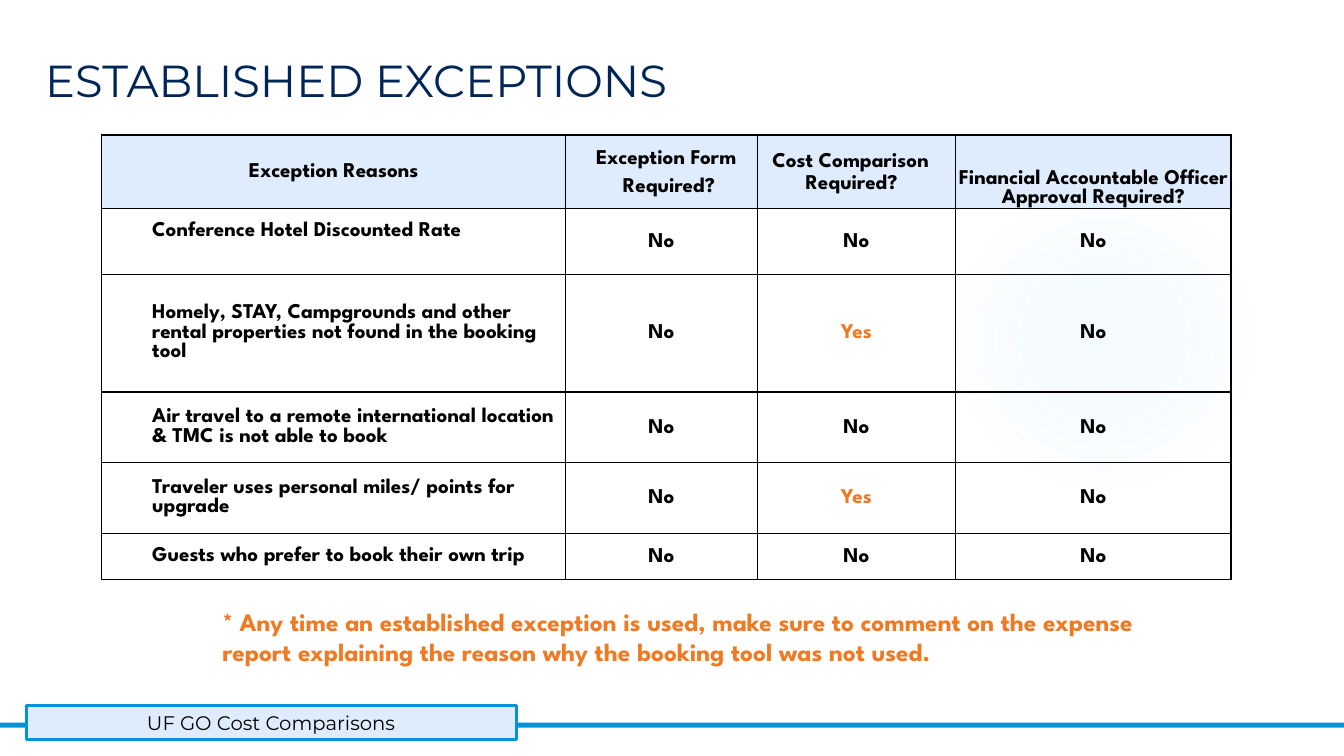
from dataclasses import dataclass

from lxml import etree
from pptx import Presentation
from pptx.dml.color import RGBColor
from pptx.enum.shapes import MSO_SHAPE
from pptx.enum.text import MSO_ANCHOR, PP_ALIGN
from pptx.oxml import parse_xml
from pptx.oxml.ns import nsdecls
from pptx.util import Inches, Pt

LEFT, CENTER = PP_ALIGN.LEFT, PP_ALIGN.CENTER
MIDDLE, BOTTOM = MSO_ANCHOR.MIDDLE, MSO_ANCHOR.BOTTOM
RECTANGLE, OVAL = MSO_SHAPE.RECTANGLE, MSO_SHAPE.OVAL


@dataclass(frozen=True)
class Theme:
    navy: str = "002657"
    blue: str = "0593D7"
    pale_blue: str = "DEECFD"
    glow: str = "7AC4F0"
    orange: str = "EF7A24"
    black: str = "000000"
    heading_font: str = "Montserrat"
    table_font: str = "League Spartan"
    title_size: int = 32
    note_size: int = 18
    table_size: int = 15
    footer_size: int = 14


@dataclass(frozen=True)
class TextStyle:
    font: str
    size: int
    color: str
    bold: bool = False
    align: PP_ALIGN = LEFT
    line_spacing: float | Pt = 1.0
    space_between: float = 0
    margin: float = 0
    first_indent: float = 0


@dataclass(frozen=True)
class CellLook:
    style: TextStyle
    anchor: MSO_ANCHOR = MIDDLE
    fill: str | None = None
    bottom_inset: float = 0


@dataclass(frozen=True)
class Box:
    left: float
    top: float
    width: float
    height: float

    def lengths(self) -> list[Inches]:
        return [Inches(v) for v in (self.left, self.top, self.width, self.height)]


THEME = Theme()


def table_style(**changes) -> TextStyle:
    return TextStyle(THEME.table_font, THEME.table_size,
                     changes.pop("color", THEME.black), bold=True, **changes)


HANGING = {"line_spacing": Pt(16.1), "space_between": 4, "margin": 0.48, "first_indent": -0.33}
HEADERS = [
    ("Exception Reasons", table_style(align=CENTER, line_spacing=1.07), MIDDLE),
    ("Exception Form \nRequired?", table_style(align=CENTER, **HANGING), MIDDLE),
    ("Cost Comparison Required?", table_style(**HANGING), MIDDLE),
    ("Financial Accountable Officer Approval Required?", table_style(align=CENTER), BOTTOM),
]
EXCEPTIONS = [
    ("Conference Hotel Discounted Rate", "No", "No", "No"),
    ("Homely, STAY, Campgrounds and other rental properties not found in the booking tool",
     "No", "Yes", "No"),
    ("Air travel to a remote international location & TMC is not able to book",
     "No", "No", "No"),
    ("Traveler uses personal miles/ points for upgrade", "No", "Yes", "No"),
    ("Guests who prefer to book their own trip", "No", "No", "No"),
]
COLUMN_WIDTHS = [4.6, 1.9, 1.97, 2.73]
ROW_HEIGHTS = [0.73, 0.65, 1.17, 0.7, 0.7, 0.46]
FIRST_REASON_INSET = 0.2


def write_text(text_frame, text: str, style: TextStyle) -> None:
    text_frame.word_wrap = True
    text_frame.text = text
    for index, paragraph in enumerate(text_frame.paragraphs):
        properties = paragraph._p.get_or_add_pPr()
        properties.set("marL", str(Inches(style.margin)))
        properties.set("indent", str(Inches(style.first_indent)))
        paragraph.alignment = style.align
        paragraph.line_spacing = style.line_spacing
        if index:
            paragraph.space_before = Pt(style.space_between)
        paragraph.font.name = style.font
        paragraph.font.size = Pt(style.size)
        paragraph.font.bold = style.bold
        paragraph.font.color.rgb = RGBColor.from_string(style.color)


def add_text(slide, box: Box, text: str, style: TextStyle, anchor: MSO_ANCHOR = MIDDLE) -> None:
    text_frame = slide.shapes.add_textbox(*box.lengths()).text_frame
    text_frame.vertical_anchor = anchor
    write_text(text_frame, text, style)


def add_panel(slide, kind: MSO_SHAPE, box: Box, fill: str, line: str | None = None):
    shape = slide.shapes.add_shape(kind, *box.lengths())
    shape.shadow.inherit = False
    shape.fill.solid()
    shape.fill.fore_color.rgb = RGBColor.from_string(fill)
    if line:
        shape.line.color.rgb = RGBColor.from_string(line)
        shape.line.width = Pt(2.25)
    else:
        shape.line.fill.background()
    return shape


def add_glow(slide, box: Box) -> None:
    """Draw a circle that fades from a faint tint to nothing at its rim."""
    shape = add_panel(slide, OVAL, box, THEME.glow)
    stops = "".join(
        f'<a:gs pos="{position * 1000}"><a:srgbClr val="{THEME.glow}">'
        f'<a:alpha val="{opacity * 1000}"/></a:srgbClr></a:gs>'
        for position, opacity in ((0, 7), (36, 6), (69, 0), (100, 0)))
    gradient = parse_xml(
        f'<a:gradFill {nsdecls("a")}><a:gsLst>{stops}</a:gsLst><a:path path="circle">'
        '<a:fillToRect l="50000" t="50000" r="50000" b="50000"/></a:path></a:gradFill>')
    solid = shape._element.spPr.find("{*}solidFill")
    solid.getparent().replace(solid, gradient)


def add_borders(cell) -> None:
    properties = cell._tc.get_or_add_tcPr()
    for side in ("lnL", "lnR", "lnT", "lnB"):
        border = etree.fromstring(
            f'<a:{side} {nsdecls("a")} w="{Pt(1)}"><a:solidFill>'
            f'<a:srgbClr val="{THEME.black}"/></a:solidFill></a:{side}>')
        properties.append(border)


def fill_cell(cell, text: str, look: CellLook) -> None:
    write_text(cell.text_frame, text, look.style)
    cell.vertical_anchor = look.anchor
    cell.margin_left = cell.margin_right = cell.margin_top = 0
    cell.margin_bottom = Inches(look.bottom_inset)
    add_borders(cell)
    if look.fill:
        cell.fill.solid()
        cell.fill.fore_color.rgb = RGBColor.from_string(look.fill)
    else:
        cell.fill.background()


def add_exception_table(slide, box: Box) -> None:
    table = slide.shapes.add_table(
        len(ROW_HEIGHTS), len(COLUMN_WIDTHS), *box.lengths()).table
    table.first_row = table.horz_banding = False
    for column, width in zip(table.columns, COLUMN_WIDTHS):
        column.width = Inches(width)
    for row, height in zip(table.rows, ROW_HEIGHTS):
        row.height = Inches(height)

    for column, (text, style, anchor) in enumerate(HEADERS):
        fill_cell(table.cell(0, column), text, CellLook(style, anchor, THEME.pale_blue))
    for row, (reason, *answers) in enumerate(EXCEPTIONS, start=1):
        inset = FIRST_REASON_INSET if row == 1 else 0
        fill_cell(table.cell(row, 0), reason,
                  CellLook(table_style(margin=0.5), bottom_inset=inset))
        for column, answer in enumerate(answers, start=1):
            color = THEME.orange if answer == "Yes" else THEME.black
            style = table_style(color=color, align=CENTER, line_spacing=1.07)
            fill_cell(table.cell(row, column), answer, CellLook(style))


def main() -> None:
    presentation = Presentation()
    presentation.slide_width, presentation.slide_height = Inches(13.33), Inches(7.5)
    slide = presentation.slides.add_slide(presentation.slide_layouts[6])

    add_glow(slide, Box(9.41, 1.83, 3.08, 3.08))
    add_text(slide, Box(0.35, 0.46, 12.55, 0.66), "ESTABLISHED EXCEPTIONS",
             TextStyle(THEME.heading_font, THEME.title_size, THEME.navy))
    add_panel(slide, RECTANGLE, Box(0, 7.17, 13.33, 0.05), THEME.blue)
    footer = add_panel(slide, RECTANGLE, Box(0.26, 7, 4.86, 0.34), THEME.pale_blue, THEME.blue)
    write_text(footer.text_frame, "UF GO Cost Comparisons",
               TextStyle(THEME.heading_font, THEME.footer_size, THEME.black, align=CENTER))
    add_exception_table(slide, Box(1.01, 1.34, sum(COLUMN_WIDTHS), sum(ROW_HEIGHTS)))
    add_text(slide, Box(2.11, 5.96, 9.6, 0.71),
             "* Any time an established exception is used, make sure to comment on the expense "
             "report explaining the reason why the booking tool was not used.",
             TextStyle(THEME.table_font, THEME.note_size, THEME.orange, bold=True))
    presentation.save("out.pptx")


if __name__ == "__main__":
    main()
